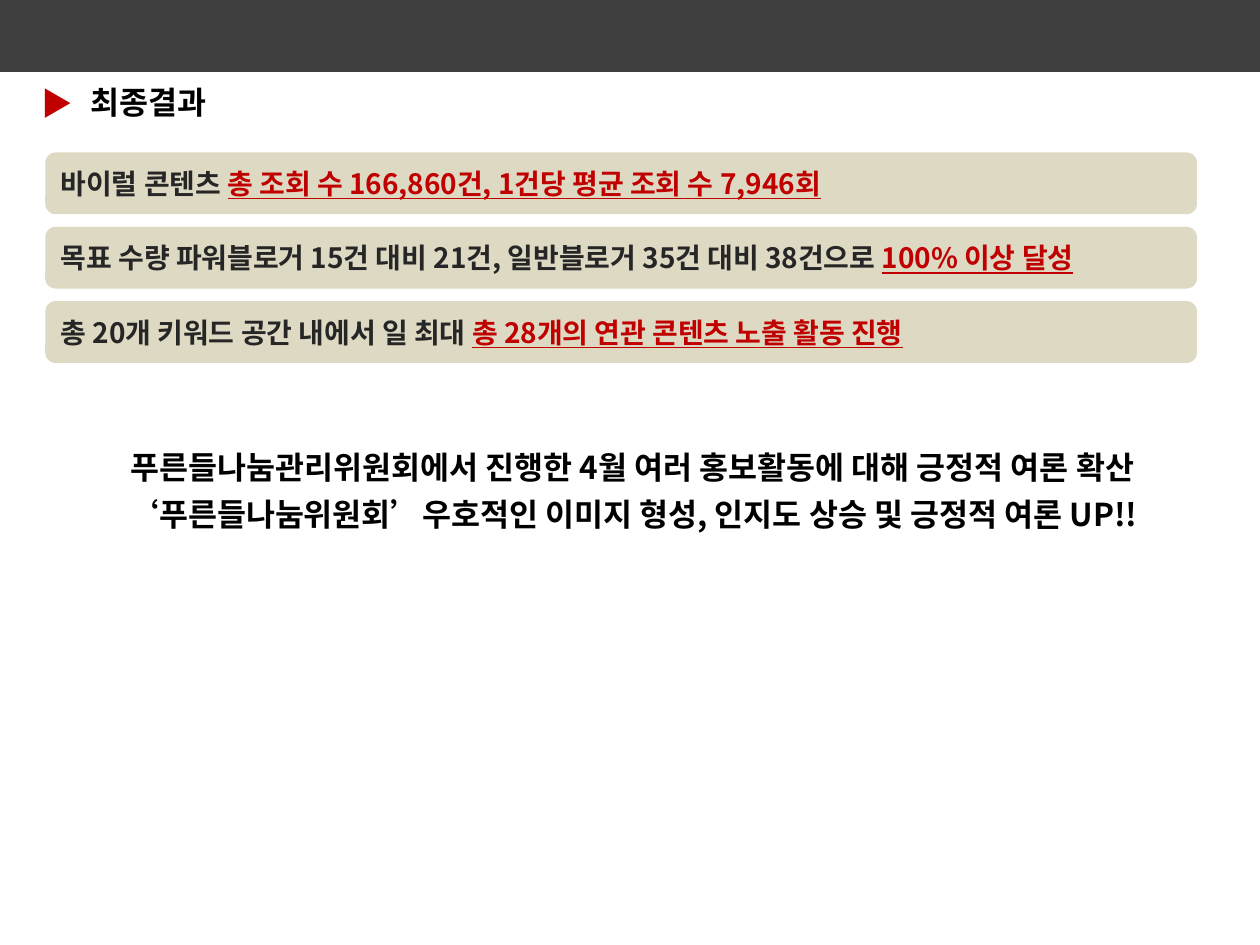
from dataclasses import dataclass

from lxml import etree
from pptx import Presentation
from pptx.dml.color import RGBColor
from pptx.enum.shapes import MSO_SHAPE
from pptx.enum.text import MSO_ANCHOR, PP_ALIGN
from pptx.oxml.ns import qn
from pptx.util import Inches, Pt

RECTANGLE = MSO_SHAPE.RECTANGLE
ROUNDED = MSO_SHAPE.ROUNDED_RECTANGLE
MIDDLE = MSO_ANCHOR.MIDDLE
LEFT, CENTER = PP_ALIGN.LEFT, PP_ALIGN.CENTER


@dataclass(frozen=True)
class Theme:
    font: str = "Noto Sans CJK KR"
    dark: str = "3F3F3F"
    panel: str = "DDD9C3"
    body: str = "262626"
    black: str = "000000"
    accent: str = "C00000"
    result_size: int = 16
    heading_size: int = 18


THEME = Theme()

RESULTS = [
    ("바이럴 콘텐츠 ", "총 조회 수 166,860건, 1건당 평균 조회 수 7,946회"),
    ("목표 수량 파워블로거 15건 대비 21건, 일반블로거 35건 대비 38건으로 ", "100% 이상 달성"),
    ("총 20개 키워드 공간 내에서 일 최대 ", "총 28개의 연관 콘텐츠 노출 활동 진행"),
]
CONCLUSIONS = [
    "푸른들나눔관리위원회에서 진행한 4월 여러 홍보활동에 대해 긍정적 여론 확산",
    "‘푸른들나눔위원회’우호적인 이미지 형성, 인지도 상승 및 긍정적 여론 UP!!",
]


def apply_format(target, values):
    for name, value in values.items():
        setattr(target, name, value)


def add_span(para, text, size, color, underline=False):
    span = para.add_run()
    span.text = text
    apply_format(span.font, {"name": THEME.font, "size": Pt(size), "bold": True, "underline": underline})
    span.font.color.rgb = RGBColor.from_string(color)
    east_asian = etree.SubElement(span.font._element, qn("a:ea"))
    east_asian.set("typeface", THEME.font)


def set_hanging_indent(para, width):
    properties = para._p.get_or_add_pPr()
    properties.set("marL", str(Inches(width)))
    properties.set("indent", str(-Inches(width)))
    return properties


def add_bullet(para, symbol, color):
    properties = set_hanging_indent(para, 0.39)
    bullet_color = etree.SubElement(properties, qn("a:buClr"))
    etree.SubElement(bullet_color, qn("a:srgbClr")).set("val", color)
    etree.SubElement(properties, qn("a:buFont")).set("typeface", THEME.font)
    etree.SubElement(properties, qn("a:buChar")).set("char", symbol)


def add_panel(page, kind, box, color):
    panel = page.shapes.add_shape(kind, *map(Inches, box))
    panel.shadow.inherit = False
    panel.fill.solid()
    panel.fill.fore_color.rgb = RGBColor.from_string(color)
    panel.line.fill.background()
    return panel


def add_header(page, box):
    header = add_panel(page, RECTANGLE, box, THEME.dark)
    header.line.color.rgb = RGBColor.from_string(THEME.dark)
    header.line.width = Pt(2)


def add_heading(page, box):
    frame = page.shapes.add_textbox(*map(Inches, box)).text_frame
    frame.word_wrap = True
    para = frame.paragraphs[0]
    add_bullet(para, "▶", THEME.accent)
    add_span(para, "최종결과", THEME.heading_size, THEME.black)


def add_results(page, box):
    left, top, width, height = box
    gap = 0.1
    bar_height = (height - gap * (len(RESULTS) - 1)) / len(RESULTS)
    for index, (lead, highlight) in enumerate(RESULTS):
        bar_top = top + index * (bar_height + gap)
        bar = add_panel(page, ROUNDED, (left, bar_top, width, bar_height), THEME.panel)
        apply_format(bar.text_frame, {"word_wrap": True, "vertical_anchor": MIDDLE})
        para = bar.text_frame.paragraphs[0]
        para.alignment = LEFT
        set_hanging_indent(para, 0.38)
        add_span(para, lead, THEME.result_size, THEME.body)
        add_span(para, highlight, THEME.result_size, THEME.accent, underline=True)


def add_conclusion(page, box):
    frame = page.shapes.add_textbox(*map(Inches, box)).text_frame
    frame.word_wrap = True
    for index, text in enumerate(CONCLUSIONS):
        para = frame.add_paragraph() if index else frame.paragraphs[0]
        apply_format(para, {"alignment": CENTER, "space_after": Pt(5)})
        add_span(para, text, THEME.heading_size, THEME.black)


def main():
    deck = Presentation()
    apply_format(deck, {"slide_width": Inches(10), "slide_height": Inches(7.5)})
    page = deck.slides.add_slide(deck.slide_layouts[6])
    add_header(page, (0, 0, 10, 0.56))
    add_results(page, (0.36, 1.21, 9.14, 1.67))
    add_conclusion(page, (0.02, 3.51, 10, 0.78))
    add_heading(page, (0.23, 0.61, 7.97, 0.4))
    deck.save("out.pptx")


if __name__ == "__main__":
    main()
